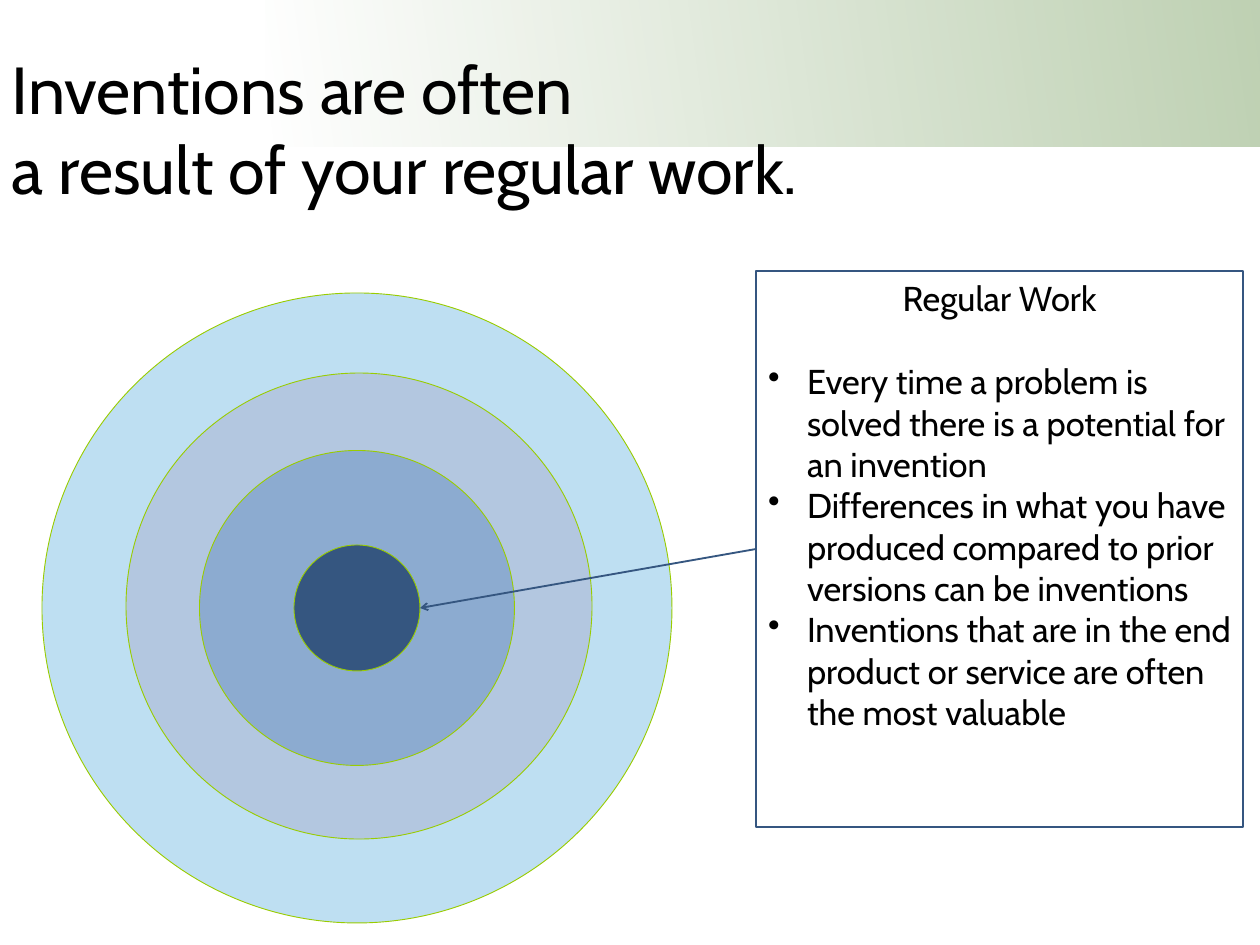
from pptx import Presentation
from pptx.dml.color import RGBColor
from pptx.enum.shapes import MSO_CONNECTOR, MSO_SHAPE
from pptx.enum.text import MSO_ANCHOR, MSO_AUTO_SIZE, PP_ALIGN
from pptx.oxml.ns import qn
from pptx.oxml.xmlchemy import OxmlElement
from pptx.util import Pt

PX = 10320
NAVY = "355680"
LIME = "99CC00"
INDENT = 39


def color(hex_string):
    return RGBColor.from_string(hex_string)


def write(para, text, size=28, align=PP_ALIGN.LEFT, bullet=None, space_after=0):
    para.text = text
    if bullet:
        properties = para._p.get_or_add_pPr()
        properties.set("marL", str(INDENT * PX))
        properties.set("indent", str(-INDENT * PX))
        mark = OxmlElement("a:buChar")
        mark.set("char", bullet)
        properties.append(mark)
    para.alignment = align
    para.space_before = Pt(0)
    para.space_after = Pt(space_after)
    for span in para.runs:
        span.font.name = "Cabin"
        span.font.size = Pt(size)
        span.font.color.rgb = color("000000")


deck = Presentation()
deck.slide_width, deck.slide_height = 1260 * PX, 945 * PX
page = deck.slides.add_slide(deck.slide_layouts[5])
shapes = page.shapes

# Title
title = shapes.title
title.left, title.top, title.width, title.height = 0, 42 * PX, 1014 * PX, 320 * PX
write(title.text_frame.paragraphs[0],
      "Inventions are often\va result of your regular work.", size=54)

# Green band behind the title
band = shapes.add_shape(MSO_SHAPE.RECTANGLE, 265 * PX, 0, 995 * PX, 147 * PX)
band.shadow.inherit = False
band.line.fill.background()
band.fill.gradient()
band.fill.gradient_angle = 8
for stop, shade in zip(band.fill.gradient_stops, ("FFFFFF", "508231")):
    stop.color.rgb = color(shade)
for shade in band._element.spPr.iter(qn("a:srgbClr")):
    alpha = OxmlElement("a:alpha")
    alpha.set("val", "36000")
    shade.append(alpha)
title._element.addprevious(band._element)

# Rings, from the outside in
rings = [
    (357, 608, 630, "BEDFF2"),
    (359, 606, 466, "B3C7E0"),
    (357, 608, 315, "8CABD0"),
    (357, 608, 126, NAVY),
]
for center_x, center_y, diameter, shade in rings:
    radius = diameter / 2
    ring = shapes.add_shape(
        MSO_SHAPE.OVAL, int((center_x - radius) * PX), int((center_y - radius) * PX),
        diameter * PX, diameter * PX)
    ring.shadow.inherit = False
    ring.fill.solid()
    ring.fill.fore_color.rgb = color(shade)
    ring.line.color.rgb = color(LIME)
    ring.line.width = Pt(0.75)

# Arrow from the box to the core
arrow = shapes.add_connector(
    MSO_CONNECTOR.STRAIGHT, 756 * PX, 549 * PX, 420 * PX, 608 * PX)
arrow.line.color.rgb = color(NAVY)
arrow.line.width = Pt(1.5)
head = OxmlElement("a:tailEnd")
head.set("type", "arrow")
arrow.line._get_or_add_ln().append(head)
arrow._element.spPr.append(OxmlElement("a:effectLst"))

# Regular work box
box = shapes.add_shape(MSO_SHAPE.RECTANGLE, 756 * PX, 271 * PX, 487 * PX, 556 * PX)
box.shadow.inherit = False
box.fill.background()
box.line.color.rgb = color(NAVY)
box.line.width = Pt(2.25)
write(box.text_frame.paragraphs[0], "Regular Work",
      align=PP_ALIGN.CENTER, space_after=34)
for point in (
    "Every time a problem is solved there is a potential for an invention",
    "Differences in what you have produced compared to prior versions can be inventions",
    "Inventions that are in the end product or service are often the most valuable",
):
    write(box.text_frame.add_paragraph(), point, bullet="•")

for frame in (title.text_frame, box.text_frame):
    frame.word_wrap = True
    frame.auto_size = MSO_AUTO_SIZE.NONE
    frame.vertical_anchor = MSO_ANCHOR.TOP
    frame.margin_left = frame.margin_right = 12 * PX
    frame.margin_top = frame.margin_bottom = 6 * PX

deck.save("out.pptx")
